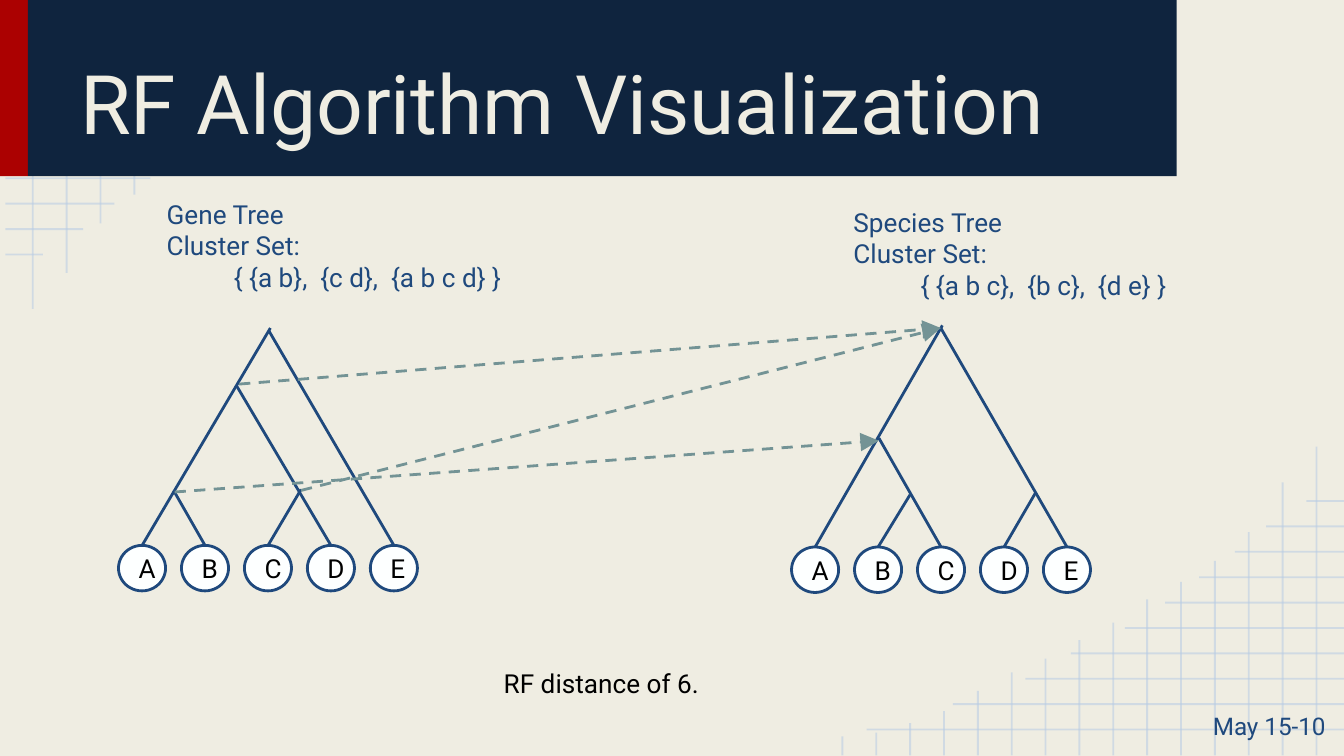
import pptx
import pptx.dml.color
import pptx.enum.dml
import pptx.enum.shapes
import pptx.enum.text
import pptx.oxml
import pptx.oxml.ns
import pptx.util
from dataclasses import dataclass

Cm, Pt = pptx.util.Cm, pptx.util.Pt
ALIGN = pptx.enum.text.PP_ALIGN
ANCHOR = pptx.enum.text.MSO_ANCHOR
SHAPE = pptx.enum.shapes.MSO_SHAPE
NS = pptx.oxml.ns.nsdecls("a")


@dataclass(frozen=True)
class Theme:
    font: str = "Roboto"
    paper: str = "EFEDE2"
    navy: str = "0F243E"
    red: str = "AB0101"
    blue: str = "1F497D"
    grid: str = "B7CCE4"
    arrow: str = "739395"
    white: str = "FDFFFF"
    black: str = "000000"
    title: int = 44
    body: int = 14
    date: int = 13
    thin: float = 1
    thick: float = 1.5


def rgb(code):
    return pptx.dml.color.RGBColor.from_string(code)


def apply(item, form):
    for name, value in form.items():
        setattr(item, name, value)


class Pen:
    def __init__(self, slide, theme):
        self.slide, self.theme = slide, theme
        fill = slide.background.fill
        fill.solid()
        fill.fore_color.rgb = rgb(theme.paper)

    def line(self, start, end, color, width, alpha=None, arrow=False):
        """Draw a line; alpha is opacity in percent, arrow adds dashes and a head."""
        link = self.slide.shapes.add_connector(
            pptx.enum.shapes.MSO_CONNECTOR.STRAIGHT,
            *(Cm(v) for v in (*start, *end)))
        link.line.color.rgb = rgb(color)
        link.line.width = Pt(width)
        props = link._element.spPr
        if alpha:
            tint = props.find(".//" + pptx.oxml.ns.qn("a:srgbClr"))
            tint.append(pptx.oxml.parse_xml(f'<a:alpha {NS} val="{alpha * 1000}"/>'))
        if arrow:
            link.line.dash_style = pptx.enum.dml.MSO_LINE.DASH
            props.find(pptx.oxml.ns.qn("a:ln")).append(
                pptx.oxml.parse_xml(f'<a:tailEnd {NS} type="triangle" w="lg" len="lg"/>'))
        props.append(pptx.oxml.parse_xml(f"<a:effectLst {NS}/>"))

    def shape(self, kind, box, fill, edge=None):
        item = self.slide.shapes.add_shape(kind, *map(Cm, box))
        item.shadow.inherit = False
        item.fill.solid()
        item.fill.fore_color.rgb = rgb(fill)
        if edge:
            item.line.color.rgb = rgb(edge)
            item.line.width = Pt(self.theme.thick)
        else:
            item.line.fill.background()
        return item

    def label(self, item, lines, size, color, align=ALIGN.LEFT,
              anchor=ANCHOR.TOP, indent=0):
        """Fill a shape with lines; indent applies to the last one."""
        frame = item.text_frame
        pad = Cm(0.25)
        apply(frame, dict(
            text="\n".join(lines), word_wrap=True, vertical_anchor=anchor,
            margin_left=pad, margin_right=pad, margin_top=pad, margin_bottom=pad))
        for para in frame.paragraphs:
            para.alignment = align
            for run in para.runs:
                apply(run.font, dict(name=self.theme.font, size=Pt(size)))
                run.font.color.rgb = rgb(color)
        if indent:
            para._p.get_or_add_pPr().set("indent", str(Cm(indent)))

    def text(self, box, lines, size, color, **form):
        item = self.slide.shapes.add_textbox(*map(Cm, box))
        self.label(item, lines, size, color, **form)

    def grid(self, place):
        """Draw the corner grid, with each point moved by place."""
        rows = (9.12, 7.49, 6.12, 5.26, 4.24, 3.48, 2.84, 2.16, 1.57, 0.81)
        cols = (5.84, 5.16, 4.22, 3.68, 3.28, 2.95, 2.51, 2.18, 1.83,
                1.57, 1.22, 0.84, 0.61, 0.43, 0.36)
        lines = [((0.1, 0.49 + 0.48 * i), (x, 0.49 + 0.48 * i))
                 for i, x in enumerate(rows)]
        lines += [((0.62 + 0.64 * i, y), (0.62 + 0.64 * i, 0))
                  for i, y in enumerate(cols)]
        for start, end in lines:
            self.line(place(*start), place(*end), self.theme.grid,
                      self.theme.thin, alpha=54)

    def tree(self, left, top, nodes):
        """Draw leaves A to E and a branch from each leaf up to its node."""
        step, wide, high = 1.19, 0.89, 0.86
        for i, (name, node) in enumerate(zip("ABCDE", nodes)):
            x = left + step * i
            leaf = self.shape(SHAPE.OVAL, (x, top, wide, high),
                              self.theme.white, self.theme.blue)
            self.label(leaf, [name], self.theme.body, self.theme.black,
                       align=ALIGN.CENTER, anchor=ANCHOR.MIDDLE)
            self.line((x + wide / 2, top), node, self.theme.blue, self.theme.thick)


def main():
    deck = pptx.Presentation()
    apply(deck, dict(slide_width=Cm(25.4), slide_height=Cm(14.29)))
    look = Theme()
    pen = Pen(deck.slides.add_slide(deck.slide_layouts[6]), look)

    pen.grid(lambda x, y: (x, y))
    pen.grid(lambda x, y: (25.5 - x, 14.28 - y))

    pen.shape(SHAPE.RECTANGLE, (0, -0.03, 0.53, 3.36), look.red)
    pen.shape(SHAPE.RECTANGLE, (0.53, -0.03, 21.71, 3.36), look.navy)
    pen.text((1.27, 0.28, 20.32, 2.82), ["RF Algorithm Visualization"],
             look.title, look.paper, anchor=ANCHOR.BOTTOM)

    pen.tree(2.24, 10.31, [(5.11, 6.2), (3.28, 9.27), (5.69, 9.25),
                           (4.47, 7.29), (5.08, 6.25)])
    pen.tree(14.96, 10.34, [(17.81, 6.15), (17.2, 9.35), (16.61, 8.28),
                            (19.58, 9.3), (17.78, 6.2)])

    for box, name, sets in (
            ((2.9, 3.5, 7.21, 2.21), "Gene Tree", "{ {a b},  {c d},  {a b c d} }"),
            ((15.88, 3.65, 7.01, 2.21), "Species Tree", "{ {a b c},  {b c},  {d e} }")):
        pen.text(box, [name, "Cluster Set:", sets], look.body, look.blue, indent=1.27)

    root = (17.78, 6.2)
    for start, end in (((4.52, 7.26), root), ((3.3, 9.3), (16.61, 8.33)),
                       ((5.69, 9.27), root)):
        pen.line(start, end, look.arrow, look.thick, arrow=True)

    pen.text((9.27, 12.37, 4.32, 0.97), ["RF distance of 6."], look.body, look.black)
    pen.text((22.58, 13.18, 2.72, 1.09), ["May 15-10"], look.date, look.blue,
             align=ALIGN.RIGHT, anchor=ANCHOR.MIDDLE)
    deck.save("out.pptx")


if __name__ == "__main__":
    main()
